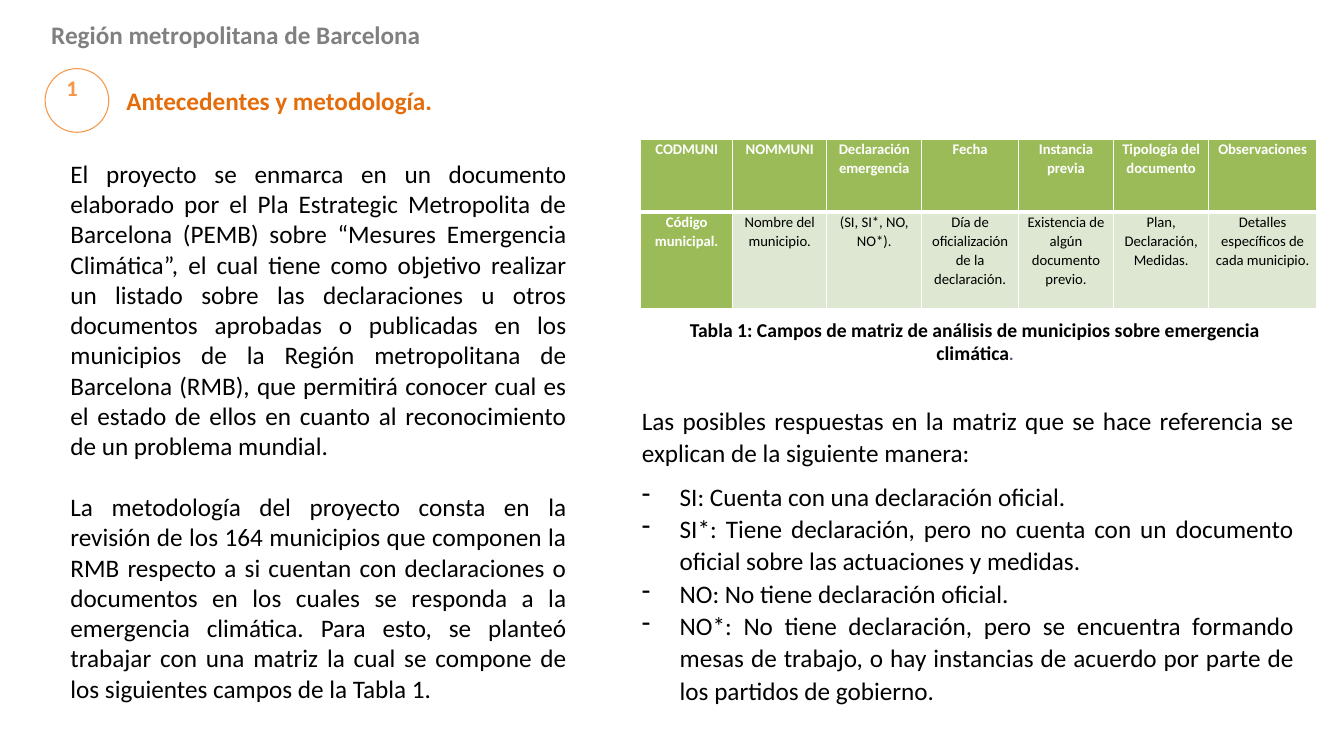
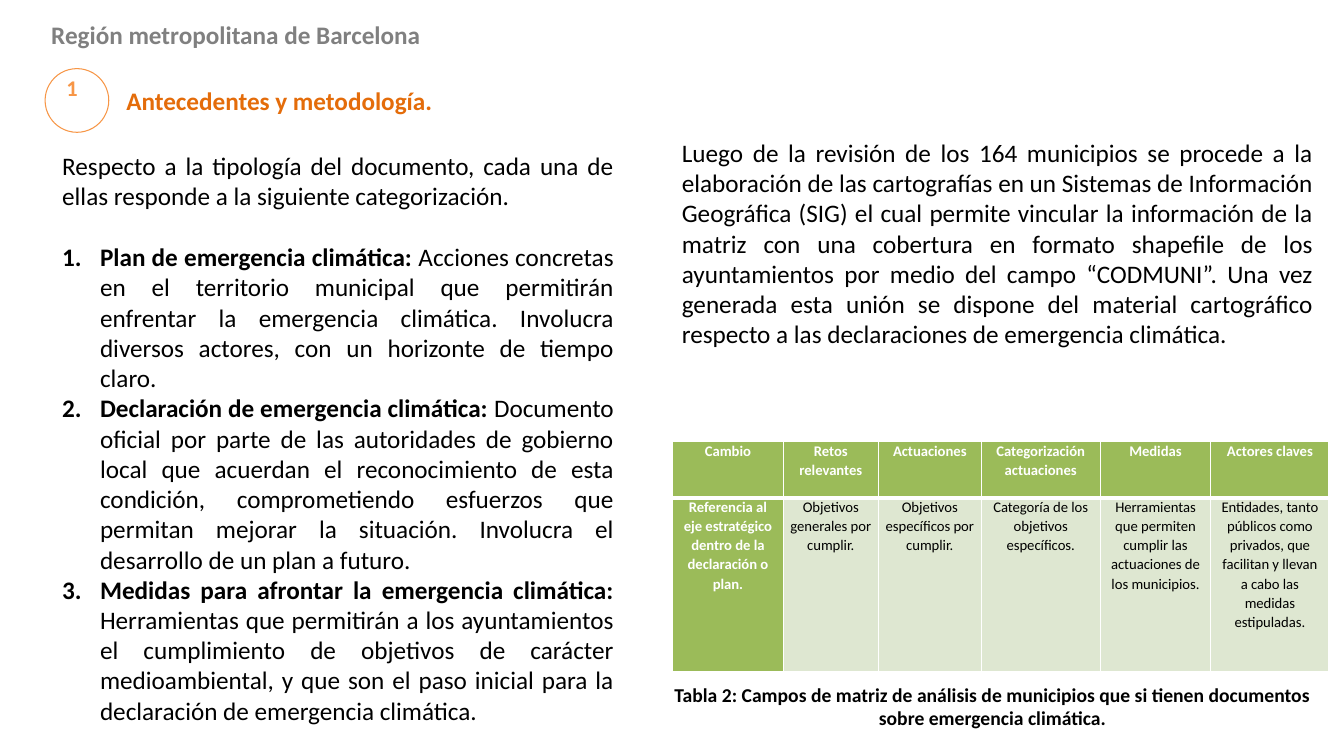
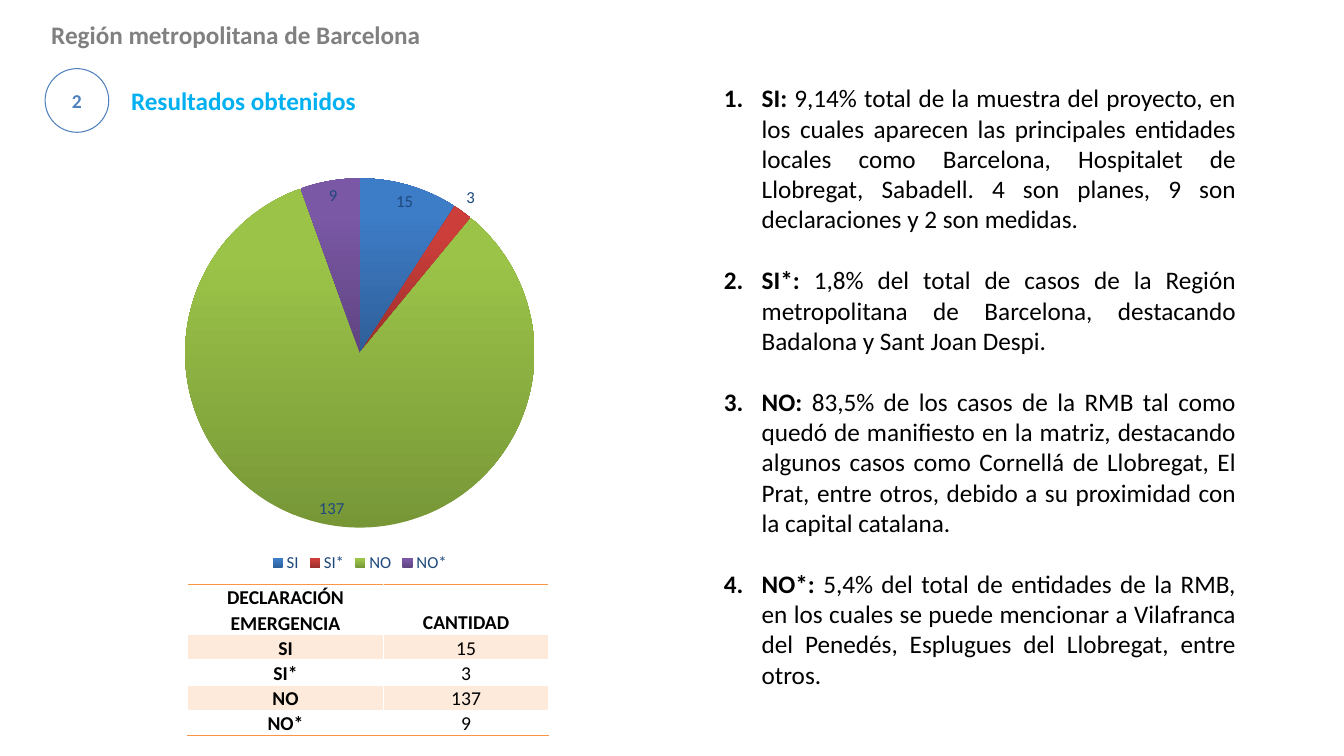
import pptx
import pptx.chart.data
import pptx.dml.color
import pptx.enum.chart
import pptx.enum.shapes
import pptx.enum.text
import pptx.oxml.ns
import pptx.util
from lxml import etree

Pt = pptx.util.Pt
RGBColor = pptx.dml.color.RGBColor
Align = pptx.enum.text.PP_ALIGN
Anchor = pptx.enum.text.MSO_ANCHOR
qn = pptx.oxml.ns.qn

FONT = "Calibri"
BLACK = RGBColor(0x00, 0x00, 0x00)
WHITE = RGBColor(0xFF, 0xFF, 0xFF)
GRAY = RGBColor(0x80, 0x80, 0x80)
SLATE = RGBColor(0x44, 0x54, 0x6A)
NAVY = RGBColor(0x1F, 0x49, 0x7D)
DARK_ORANGE = RGBColor(0xE4, 0x6C, 0x0A)
ORANGE = RGBColor(0xF7, 0x96, 0x46)
PALE_ORANGE = RGBColor(0xFD, 0xEA, 0xDA)
SKY = RGBColor(0x00, 0xB0, 0xF0)
BLUE = RGBColor(0x4F, 0x81, 0xBD)
GREEN = RGBColor(0x9B, 0xBB, 0x59)
PALE_GREEN = RGBColor(0xDE, 0xE7, 0xD1)
SLICE_GRADIENTS = [
    (RGBColor(0x2F, 0x5F, 0x99), RGBColor(0x3D, 0x7C, 0xC7)),
    (RGBColor(0x9C, 0x2F, 0x2D), RGBColor(0xCB, 0x3E, 0x3A)),
    (RGBColor(0x77, 0x97, 0x37), RGBColor(0x9B, 0xC3, 0x48)),
    (RGBColor(0x5F, 0x44, 0x80), RGBColor(0x7B, 0x58, 0xA6)),
]

BODY_SIZE = 18
LINE_GAP = 22
HANGING = 27
LOOSE = 1.07


def add_run(para, text, size=BODY_SIZE, color=BLACK, bold=False):
    span = para.add_run()
    span.text = text
    span.font.name = FONT
    span.font.size = Pt(size)
    span.font.bold = bold
    span.font.color.rgb = color


def add_box(page, left, top, width, height):
    box = page.shapes.add_textbox(Pt(left), Pt(top), Pt(width), Pt(height))
    box.text_frame.word_wrap = True
    return box.text_frame


def next_paragraph(frame, align, before=0, after=0, spacing=None):
    first = frame.paragraphs[0]
    para = first if not first.runs else frame.add_paragraph()
    para.alignment = align
    para.space_before = Pt(before)
    para.space_after = Pt(after)
    if spacing:
        para.line_spacing = spacing
    return para


def add_body(frame, text, **spacing):
    add_run(next_paragraph(frame, Align.JUSTIFY, **spacing), text)


def set_bullet(para, tag, **attributes):
    properties = para._p.get_or_add_pPr()
    properties.set("marL", str(Pt(HANGING)))
    properties.set("indent", str(-Pt(HANGING)))
    etree.SubElement(properties, qn(tag), attributes)


def add_dashed(frame, text, **spacing):
    para = next_paragraph(frame, Align.JUSTIFY, spacing=LOOSE, **spacing)
    set_bullet(para, "a:buChar", char="-")
    add_run(para, text)


def add_numbered(frame, term, text, **spacing):
    para = next_paragraph(frame, Align.JUSTIFY, **spacing)
    set_bullet(para, "a:buAutoNum", type="arabicPeriod")
    add_run(para, term, bold=True)
    add_run(para, " " + text)


def add_caption(page, left, top, text):
    para = next_paragraph(add_box(page, left, top, 479, 41), Align.CENTER, after=10)
    add_run(para, text, size=14, bold=True)
    return para


def add_badge(page, number, size, color):
    badge = page.shapes.add_shape(
        pptx.enum.shapes.MSO_SHAPE.FLOWCHART_CONNECTOR, Pt(32.2), Pt(49), Pt(45.5), Pt(45.5))
    badge.shadow.inherit = False
    badge.fill.background()
    badge.line.color.rgb = color
    badge.line.width = Pt(0.75)
    frame = badge.text_frame
    frame.vertical_anchor = Anchor.MIDDLE
    add_run(next_paragraph(frame, Align.CENTER), number, size, color, True)
    return frame


def add_page(deck, title, title_color, left, width):
    page = deck.slides.add_slide(deck.slide_layouts[5])
    header = add_box(page, 29.5, 10, 280, 29)
    add_run(header.paragraphs[0], "Región metropolitana de Barcelona", color=GRAY, bold=True)
    heading = page.shapes.title
    heading.left, heading.top = Pt(left), Pt(57.3)
    heading.width, heading.height = Pt(width), Pt(29)
    frame = heading.text_frame
    frame.auto_size = pptx.enum.text.MSO_AUTO_SIZE.NONE
    frame.vertical_anchor = Anchor.TOP
    add_run(next_paragraph(frame, Align.LEFT), title, color=title_color, bold=True)
    return page


def add_background_page(deck):
    page = add_page(deck, "Antecedentes y metodología.", DARK_ORANGE, 83, 255)
    frame = add_badge(page, "1", 16, ORANGE)
    frame.margin_right = Pt(14)
    frame.margin_bottom = Pt(22)
    return page


def add_grid(page, left, top, widths, heights):
    shape = page.shapes.add_table(len(heights), len(widths), Pt(left), Pt(top),
                                  Pt(sum(widths)), Pt(sum(heights)))
    table = shape.table
    table.first_row = table.horz_banding = False
    for column, width in zip(table.columns, widths):
        column.width = Pt(width)
    for row, height in zip(table.rows, heights):
        row.height = Pt(height)
    return table


def set_border(cell, side, color, width=1):
    line = etree.SubElement(cell._tc.get_or_add_tcPr(), qn("a:ln" + side), w=str(Pt(width)))
    fill = etree.SubElement(line, qn("a:solidFill"))
    etree.SubElement(fill, qn("a:srgbClr"), val=str(color))


def fill_cell(cell, text, size, color, bold, fill, margin, anchor):
    cell.margin_left = cell.margin_right = Pt(margin)
    cell.margin_top = cell.margin_bottom = Pt(0)
    cell.vertical_anchor = anchor
    if fill is None:
        cell.fill.background()
    else:
        cell.fill.solid()
        cell.fill.fore_color.rgb = fill
    para = next_paragraph(cell.text_frame, Align.CENTER, spacing=LOOSE)
    add_run(para, text, size, color, bold)


def add_field_table(page, left, top, widths, heights, fields):
    table = add_grid(page, left, top, widths, heights)
    for column, texts in enumerate(fields):
        for row, text in enumerate(texts):
            cell = table.cell(row, column)
            strong = row == 0 or column == 0
            for side in "LRTB":
                joint = (row, side) in ((0, "B"), (1, "T"))
                set_border(cell, side, WHITE, 3 if joint else 1)
            fill_cell(cell, text, 10.5, WHITE if strong else BLACK, strong,
                      GREEN if strong else PALE_GREEN, 5, Anchor.TOP)


def add_count_table(page, counts):
    rows = [("DECLARACIÓN EMERGENCIA", "CANTIDAD")] + [(name, str(n)) for name, n in counts]
    table = add_grid(page, 134, 417.5, [140, 118], [36] + [18] * len(counts))
    for row, texts in enumerate(rows):
        for column, text in enumerate(texts):
            cell = table.cell(row, column)
            if row == 0:
                set_border(cell, "T", ORANGE)
            if row in (0, len(counts)):
                set_border(cell, "B", ORANGE)
            fill_cell(cell, text, 14, BLACK, row == 0 or column == 0,
                      PALE_ORANGE if row % 2 else None, 3.6, Anchor.BOTTOM)


def style_font(font):
    font.name = FONT
    font.size = Pt(12)
    font.color.rgb = NAVY


def add_pie(page, counts):
    data = pptx.chart.data.CategoryChartData()
    data.categories = [name for name, _ in counts]
    data.add_series("Cantidad", [count for _, count in counts])
    chart = page.shapes.add_chart(pptx.enum.chart.XL_CHART_TYPE.PIE,
                                  Pt(57), Pt(111), Pt(400), Pt(301), data).chart
    chart.has_title = False
    style_font(chart.font)
    chart.has_legend = True
    chart.legend.position = pptx.enum.chart.XL_LEGEND_POSITION.BOTTOM
    chart.legend.include_in_layout = False
    style_font(chart.legend.font)
    plot = chart.plots[0]
    plot.vary_by_categories = True
    plot.has_data_labels = True
    labels = plot.data_labels
    labels.show_value = True
    labels.show_percentage = False
    labels.position = pptx.enum.chart.XL_LABEL_POSITION.BEST_FIT
    style_font(labels.font)
    for index, (dark, light) in enumerate(SLICE_GRADIENTS):
        fill = plot.series[0].points[index].format.fill
        fill.gradient()
        fill.gradient_angle = 90
        for stop, color, position in zip(fill.gradient_stops, (dark, light), (0, 0.8)):
            stop.color.rgb = color
            stop.position = position


def build_method(deck):
    page = add_background_page(deck)
    body = add_box(page, 43.2, 109.5, 368.6, 400)
    add_body(body, "El proyecto se enmarca en un documento elaborado por el Pla Estrategic Metropolita de Barcelona (PEMB) sobre “Mesures Emergencia Climática”, el cual tiene como objetivo realizar un listado sobre las declaraciones u otros documentos aprobadas o publicadas en los municipios de la Región metropolitana de Barcelona (RMB), que permitirá conocer cual es el estado de ellos en cuanto al reconocimiento de un problema mundial.")
    add_body(body, "La metodología del proyecto consta en la revisión de los 164 municipios que componen la RMB respecto a si cuentan con declaraciones o documentos en los cuales se responda a la emergencia climática. Para esto, se planteó trabajar con una matriz la cual se compone de los siguientes campos de la Tabla 1.", before=LINE_GAP)
    add_field_table(page, 457.5, 99.5, [66, 67, 68, 69, 68, 68, 77], [52, 69], [
        ("CODMUNI", "Código municipal."),
        ("NOMMUNI", "Nombre del municipio."),
        ("Declaración emergencia", "(SI, SI*, NO, NO*)."),
        ("Fecha", "Día de oficialización de la declaración."),
        ("Instancia previa", "Existencia de algún documento previo."),
        ("Tipología del documento", "Plan, Declaración, Medidas."),
        ("Observaciones", "Detalles específicos de cada municipio."),
    ])
    caption = add_caption(page, 457, 223.5, "Tabla 1: Campos de matriz de análisis de municipios sobre emergencia climática")
    add_run(caption, ".", 12, SLATE, True)
    answers = add_box(page, 451.4, 284.4, 480, 225)
    add_body(answers, "Las posibles respuestas en la matriz que se hace referencia se explican de la siguiente manera:", after=8, spacing=LOOSE)
    for text in (
        "SI: Cuenta con una declaración oficial.",
        "SI*: Tiene declaración, pero no cuenta con un documento oficial sobre las actuaciones y medidas.",
        "NO: No tiene declaración oficial.",
        "NO*: No tiene declaración, pero se encuentra formando mesas de trabajo, o hay instancias de acuerdo por parte de los partidos de gobierno.",
    ):
        add_dashed(answers, text)


def build_typology(deck):
    page = add_background_page(deck)
    body = add_box(page, 37.4, 103.7, 408.2, 422)
    add_body(body, "Respecto a la tipología del documento, cada una de ellas responde a la siguiente categorización.", after=LINE_GAP)
    for term, text in (
        ("Plan de emergencia climática:", "Acciones concretas en el territorio municipal que permitirán enfrentar la emergencia climática. Involucra diversos actores, con un horizonte de tiempo claro."),
        ("Declaración de emergencia climática:", "Documento oficial por parte de las autoridades de gobierno local que acuerdan el reconocimiento de esta condición, comprometiendo esfuerzos que permitan mejorar la situación. Involucra el desarrollo de un plan a futuro."),
        ("Medidas para afrontar la emergencia climática:", "Herramientas que permitirán a los ayuntamientos el cumplimiento de objetivos de carácter medioambiental, y que son el paso inicial para la declaración de emergencia climática."),
    ):
        add_numbered(body, term, text)
    add_body(add_box(page, 480, 94.5, 465, 181), "Luego de la revisión de los 164 municipios se procede a la elaboración de las cartografías en un Sistemas de Información Geográfica (SIG) el cual permite vincular la información de la matriz con una cobertura en formato shapefile de los ayuntamientos por medio del campo “CODMUNI”. Una vez generada esta unión se dispone del material cartográfico respecto a las declaraciones de emergencia climática.")
    add_field_table(page, 480.5, 315.5, [79, 68, 73.5, 85, 79, 84.5], [40, 124], [
        ("Cambio", "Referencia al eje estratégico dentro de la declaración o plan."),
        ("Retos relevantes", "Objetivos generales por cumplir."),
        ("Actuaciones", "Objetivos específicos por cumplir."),
        ("Categorización actuaciones", "Categoría de los objetivos específicos."),
        ("Medidas", "Herramientas que permiten cumplir las actuaciones de los municipios."),
        ("Actores claves", "Entidades, tanto públicos como privados, que facilitan y llevan a cabo las medidas estipuladas."),
    ])
    add_caption(page, 469.5, 484, "Tabla 2: Campos de matriz de análisis de municipios que si tienen documentos sobre emergencia climática.")


def build_results(deck):
    page = add_page(deck, "Resultados obtenidos", SKY, 86.4, 345.6)
    add_badge(page, "2", 14, BLUE)
    counts = [("SI", 15), ("SI*", 3), ("NO", 137), ("NO*", 9)]
    add_pie(page, counts)
    add_count_table(page, counts)
    findings = add_box(page, 510, 55.5, 380, 465)
    for term, text in (
        ("SI:", "9,14% total de la muestra del proyecto, en los cuales aparecen las principales entidades locales como Barcelona, Hospitalet de Llobregat, Sabadell. 4 son planes, 9 son declaraciones y 2 son medidas."),
        ("SI*:", "1,8% del total de casos de la Región metropolitana de Barcelona, destacando Badalona y Sant Joan Despi."),
        ("NO:", "83,5% de los casos de la RMB tal como quedó de manifiesto en la matriz, destacando algunos casos como Cornellá de Llobregat, El Prat, entre otros, debido a su proximidad con la capital catalana."),
        ("NO*:", "5,4% del total de entidades de la RMB, en los cuales se puede mencionar a Vilafranca del Penedés, Esplugues del Llobregat, entre otros."),
    ):
        add_numbered(findings, term, text, after=LINE_GAP)


def main():
    deck = pptx.Presentation()
    deck.slide_width, deck.slide_height = Pt(960), Pt(540)
    build_method(deck)
    build_typology(deck)
    build_results(deck)
    deck.save("out.pptx")


if __name__ == "__main__":
    main()
